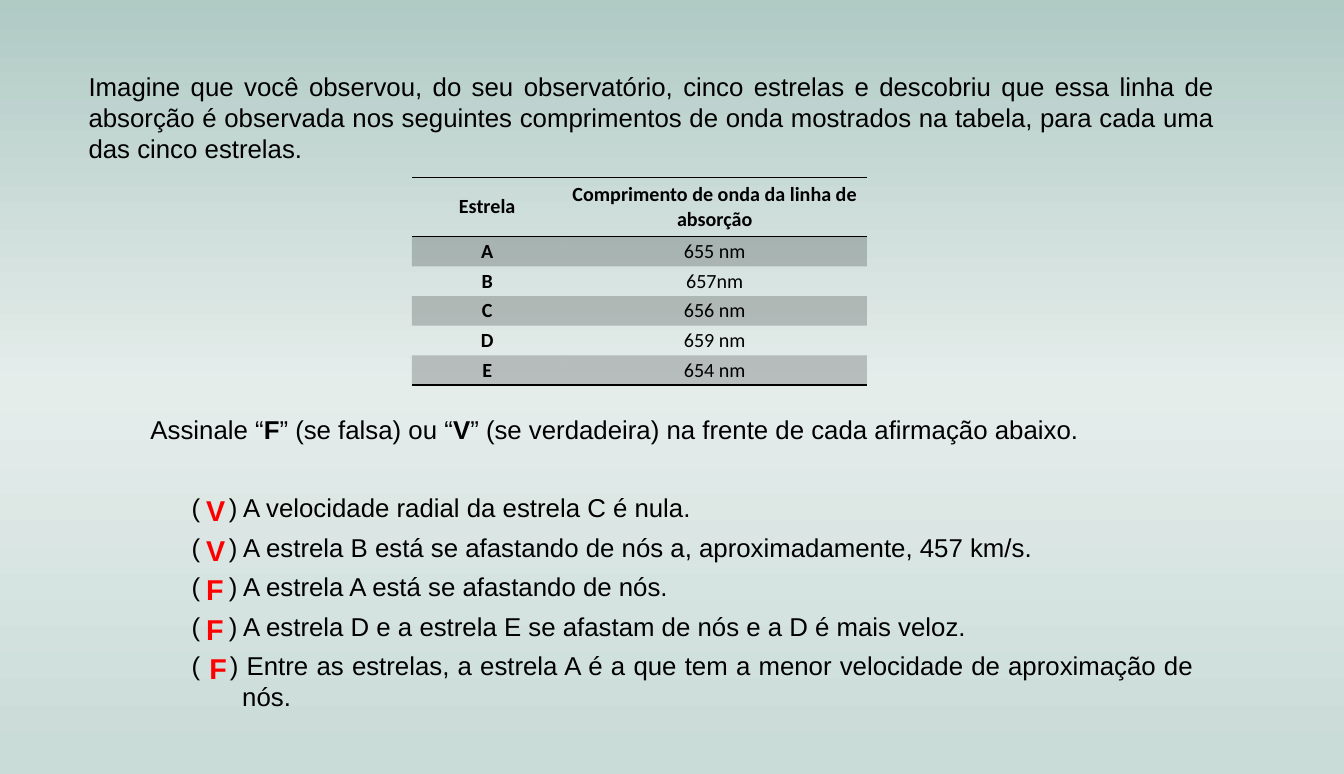
from lxml import etree
from pptx import Presentation
from pptx.dml.color import RGBColor
from pptx.enum.text import MSO_ANCHOR, MSO_AUTO_SIZE, PP_ALIGN
from pptx.oxml.ns import qn
from pptx.util import Pt

BLACK = RGBColor(0x00, 0x00, 0x00)
RED = RGBColor(0xFF, 0x00, 0x00)
BACKGROUND_STOPS = [
    (0, RGBColor(0xB0, 0xCA, 0xC4)),
    (50, RGBColor(0xE5, 0xED, 0xEB)),
    (98, RGBColor(0xCA, 0xDC, 0xD8)),
]
BAND_OPACITY = 20
BLANK_LAYOUT = 6
PLAIN_TABLE_STYLE = "{2D5ABB26-0587-4C30-8999-92F81FD0307C}"

CENTER = PP_ALIGN.CENTER
JUSTIFY = PP_ALIGN.JUSTIFY
MIDDLE = MSO_ANCHOR.MIDDLE
FIT_SHAPE = MSO_AUTO_SIZE.SHAPE_TO_FIT_TEXT

INTRO = (
    "Imagine que você observou, do seu observatório, cinco estrelas e descobriu "
    "que essa linha de absorção é observada nos seguintes comprimentos de onda "
    "mostrados na tabela, para cada uma das cinco estrelas."
)
STAR_ROWS = [
    ("Estrela", "Comprimento de onda da linha de absorção"),
    ("A", "655 nm"),
    ("B", "657nm"),
    ("C", "656 nm"),
    ("D", "659 nm"),
    ("E", "654 nm"),
]
PROMPT = [
    ("Assinale “", False),
    ("F", True),
    ("” (se falsa) ou “", False),
    ("V", True),
    ("” (se verdadeira) na frente de cada afirmação abaixo.", False),
]
STATEMENTS = [
    ("V", "A velocidade radial da estrela C é nula."),
    ("V", "A estrela B está se afastando de nós a, aproximadamente, 457 km/s."),
    ("F", "A estrela A está se afastando de nós."),
    ("F", "A estrela D e a estrela E se afastam de nós e a D é mais veloz."),
    ("F", "Entre as estrelas, a estrela A é a que tem a menor velocidade de "
          "aproximação de nós."),
]


def set_font(font, size, name="Arial", color=BLACK, bold=None):
    font.size = Pt(size)
    font.name = name
    font.color.rgb = color
    font.bold = bold


def add_box(slide, left, top, width, height, wrap=True):
    box = slide.shapes.add_textbox(Pt(left), Pt(top), Pt(width), Pt(height))
    frame = box.text_frame
    frame.word_wrap = wrap
    frame.auto_size = FIT_SHAPE
    return frame


def format_body(paragraph, space_after=6):
    paragraph.alignment = JUSTIFY
    paragraph.space_after = Pt(space_after)
    set_font(paragraph.font, 18)


def paint_background(slide):
    fill = slide.background.fill
    fill.gradient()
    fill.gradient_angle = 270
    stops = next(slide.element.iter(qn("a:gsLst")))
    for stop in list(stops):
        stops.remove(stop)
    for position, color in BACKGROUND_STOPS:
        stop = etree.SubElement(stops, qn("a:gs"), pos=str(position * 1000))
        etree.SubElement(stop, qn("a:srgbClr"), val=str(color))


def add_border(cell, side, index):
    """Draw a black 1 pt line; index keeps the borders ahead of the fill."""
    line = etree.Element(qn(f"a:ln{side}"), w=str(Pt(1)))
    solid = etree.SubElement(line, qn("a:solidFill"))
    etree.SubElement(solid, qn("a:srgbClr"), val=str(BLACK))
    cell._tc.get_or_add_tcPr().insert(index, line)


def fill_band(cell):
    cell.fill.solid()
    cell.fill.fore_color.rgb = BLACK
    color = next(cell._tc.tcPr.iter(qn("a:srgbClr")))
    etree.SubElement(color, qn("a:alpha"), val=str(BAND_OPACITY * 1000))


def format_cell(cell, text, bold):
    cell.text = text
    cell.vertical_anchor = MIDDLE
    cell.margin_left = cell.margin_right = Pt(5)
    cell.margin_top = cell.margin_bottom = 0
    paragraph = cell.text_frame.paragraphs[0]
    paragraph.alignment = CENTER
    set_font(paragraph.font, 14, "Calibri", bold=bold)


def add_star_table(slide):
    row_count = len(STAR_ROWS)
    table = slide.shapes.add_table(
        row_count, 2, Pt(287.3), Pt(123.8), Pt(317.5), Pt(144.9)).table
    table.first_row = table.horz_banding = False
    next(table._tbl.iter(qn("a:tableStyleId"))).text = PLAIN_TABLE_STYLE
    for column, width in zip(table.columns, (105.1, 212.4)):
        column.width = Pt(width)
    for r, texts in enumerate(STAR_ROWS):
        table.rows[r].height = Pt(41.4 if r == 0 else 20.7)
        for c, text in enumerate(texts):
            cell = table.cell(r, c)
            format_cell(cell, text, bold=r == 0 or c == 0)
            if r % 2:
                fill_band(cell)
            else:
                cell.fill.background()
            if r == 0:
                add_border(cell, "T", 0)
                add_border(cell, "B", 1)
            elif r == row_count - 1:
                add_border(cell, "B", 0)


def add_statement(frame, statement):
    """Add a hanging item whose brackets leave room for the answer letter."""
    paragraph = frame.add_paragraph()
    for text in ("(", " ", f") {statement}"):
        paragraph.add_run().text = text
    gap = paragraph.runs[1]
    gap._r.get_or_add_rPr().set("spc", "1500")
    properties = paragraph._p.get_or_add_pPr()
    properties.set("marL", str(Pt(64)))
    properties.set("indent", str(Pt(-35.3)))
    format_body(paragraph)


def add_exercise(slide):
    frame = add_box(slide, 97.9, 258.5, 741.6, 246.2)
    frame.margin_top = Pt(30.3)
    prompt = frame.paragraphs[0]
    for text, bold in PROMPT:
        run = prompt.add_run()
        run.text = text
        run.font.bold = bold
    format_body(prompt, space_after=32.7)
    for _, statement in STATEMENTS:
        add_statement(frame, statement)


def add_answers(slide):
    last = len(STATEMENTS) - 1
    for i, (answer, _) in enumerate(STATEMENTS):
        left = 139 if i == last else 136.8
        width = 28 if answer == "V" else 26.6
        frame = add_box(slide, left, 340.6 + 27.5 * i, width, 31.5, wrap=False)
        frame.text = answer
        set_font(frame.paragraphs[0].font, 20, color=RED, bold=True)


def main():
    presentation = Presentation()
    presentation.slide_width = Pt(937.5)
    presentation.slide_height = Pt(540)
    slide = presentation.slides.add_slide(
        presentation.slide_layouts[BLANK_LAYOUT])
    paint_background(slide)
    intro = add_box(slide, 54.7, 46.1, 799.2, 72.7)
    intro.text = INTRO
    format_body(intro.paragraphs[0])
    add_star_table(slide)
    add_exercise(slide)
    add_answers(slide)
    presentation.save("out.pptx")


if __name__ == "__main__":
    main()
